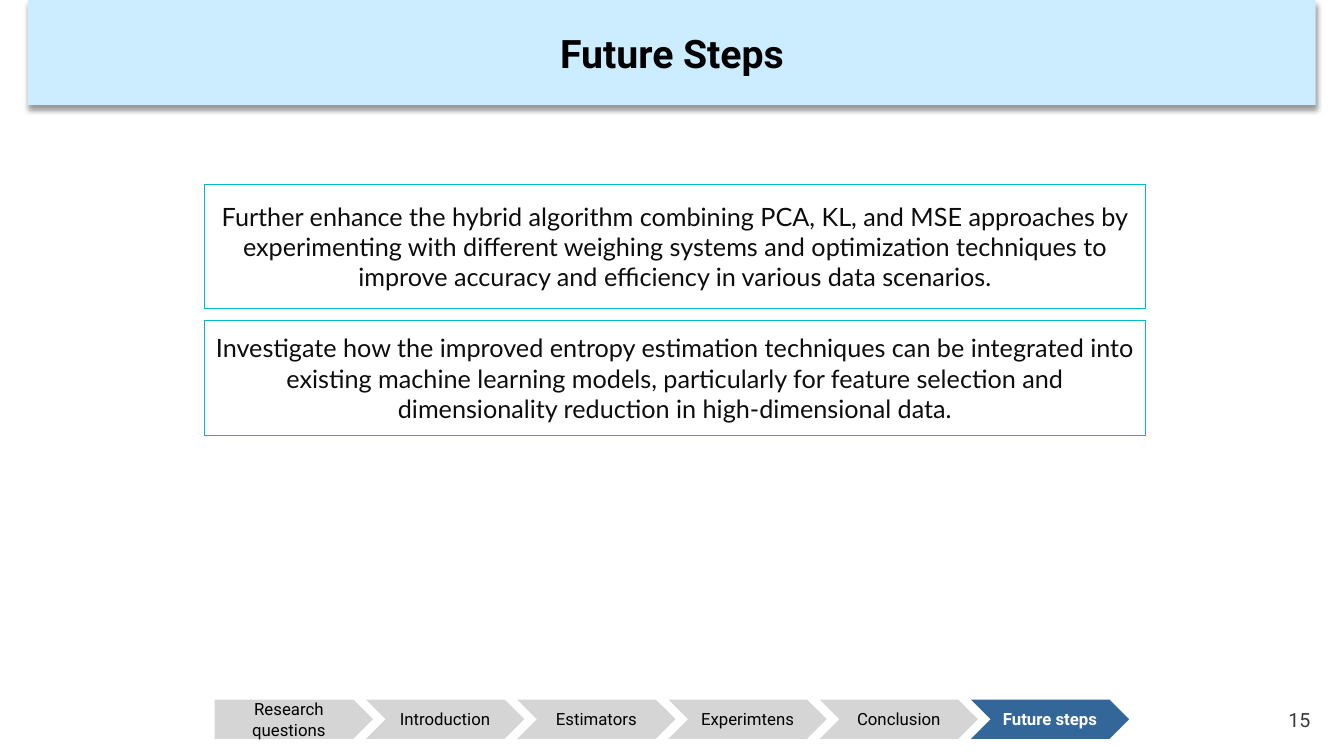
from lxml.etree import SubElement
from pptx import Presentation
from pptx.dml.color import RGBColor
from pptx.enum.shapes import MSO_SHAPE
from pptx.enum.text import MSO_ANCHOR, PP_ALIGN
from pptx.oxml.ns import qn
from pptx.util import Inches, Pt

COLORS = {
    "band": "CCECFF", "black": "000000", "white": "FFFFFF", "ink": "0D0D0D",
    "teal": "00BAC7", "grey": "D5D5D5", "blue": "336699", "number": "3A3A3A",
}


def paint(shape, fill, line=None):
    shape.fill.solid()
    shape.fill.fore_color.rgb = RGBColor.from_string(COLORS[fill])
    if line:
        shape.line.color.rgb = RGBColor.from_string(COLORS[line])
        shape.line.width = Pt(1)
    else:
        shape.line.fill.background()


def write(shape, text, size, face, color, bold=False, align=PP_ALIGN.CENTER):
    frame = shape.text_frame
    frame.word_wrap = True
    frame.vertical_anchor = MSO_ANCHOR.MIDDLE
    para = frame.paragraphs[0]
    para.alignment = align
    run = para.add_run()
    run.text = text
    run.font.size = Pt(size)
    run.font.name = face
    run.font.bold = bold
    run.font.color.rgb = RGBColor.from_string(COLORS[color])


deck = Presentation()
deck.slide_width = Inches(13.33)
deck.slide_height = Inches(7.5)
slide = deck.slides.add_slide(deck.slide_layouts[5])

title = slide.shapes.title
title.left, title.top = Inches(0.28), Inches(0)
title.width, title.height = Inches(12.77), Inches(1.04)
paint(title, "band")
write(title, "Future Steps", 28, "Roboto", "black", True)
effects = SubElement(title.element.spPr, qn("a:effectLst"))
shadow = SubElement(effects, qn("a:outerShdw"), blurRad=str(Pt(4)),
                    dist=str(Pt(3)), dir="5400000", rotWithShape="0")
tint = SubElement(shadow, qn("a:srgbClr"), val=COLORS["black"])
SubElement(tint, qn("a:alpha"), val="40000")

number = slide.shapes.add_textbox(Inches(12.68), Inches(6.94), Inches(0.53), Inches(0.4))
write(number, "15", 14, "Roboto", "number", align=PP_ALIGN.LEFT)

goals = [
    (1.83, 1.23, "Further enhance the hybrid algorithm combining PCA, KL, and MSE "
     "approaches by experimenting with different weighing systems and optimization "
     "techniques to improve accuracy and efficiency in various data scenarios."),
    (3.18, 1.14, "Investigate how the improved entropy estimation techniques can be "
     "integrated into existing machine learning models, particularly for feature "
     "selection and dimensionality reduction in high-dimensional data."),
]
for top, height, text in goals:
    box = slide.shapes.add_shape(MSO_SHAPE.RECTANGLE, Inches(2.03), Inches(top),
                                 Inches(9.33), Inches(height))
    box.shadow.inherit = False
    paint(box, "white", "teal")
    write(box, text, 18, "Lato", "ink")

steps = ["Research questions", "Introduction", "Estimators",
         "Experimtens", "Conclusion", "Future steps"]
trail = slide.shapes.add_group_shape()
for index, label in enumerate(steps):
    kind = MSO_SHAPE.CHEVRON if index else MSO_SHAPE.PENTAGON
    active = label == steps[-1]
    step = trail.shapes.add_shape(kind, Inches(2.13 + 1.5 * index), Inches(6.94),
                                  Inches(1.57), Inches(0.39))
    step.shadow.inherit = False
    paint(step, "blue" if active else "grey")
    write(step, label, 12, "Roboto", "white" if active else "black", active)
    frame = step.text_frame
    frame.margin_left = frame.margin_right = Inches(0.05)
    frame.margin_top = frame.margin_bottom = Inches(0)

deck.save("out.pptx")
